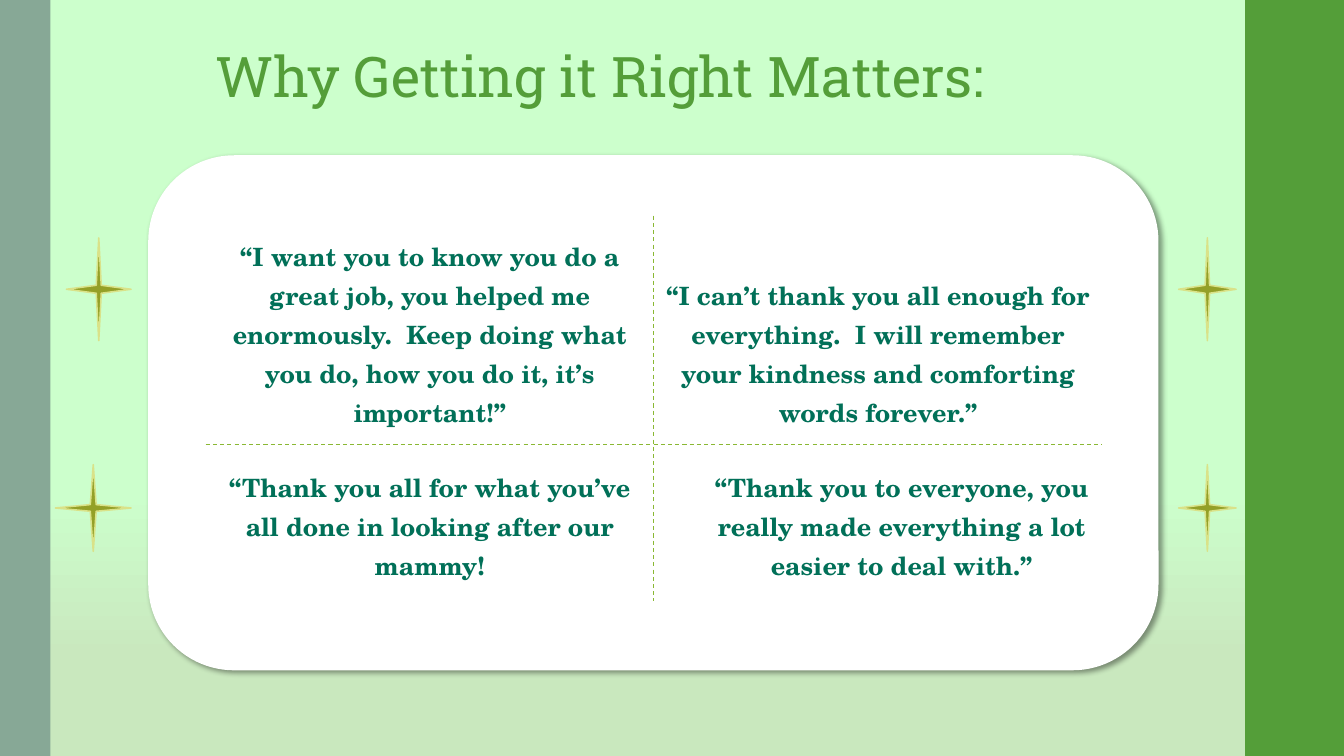
from lxml.etree import SubElement
from pptx import Presentation
from pptx.dml.color import RGBColor
from pptx.enum.dml import MSO_LINE
from pptx.enum.shapes import MSO_CONNECTOR, MSO_SHAPE
from pptx.enum.text import MSO_ANCHOR, PP_ALIGN
from pptx.oxml.ns import qn
from pptx.util import Pt

# Content
TITLE = "Why Getting it Right Matters:"
# Each quote: text, extra left margin, extra top margin
QUOTES = [
    [("“I want you to know you do a great job, you helped me enormously.  "
      "Keep doing what you do, how you do it, it’s important!”", 0, 0),
     ("“I can’t thank you all enough for everything.  I will remember "
      "your kindness and comforting words forever.”", 0, 39)],
    [("“Thank you all for what you’ve all done in looking after our mammy!", 0, 0),
     ("“Thank you to everyone, you really made everything a lot easier "
      "to deal with.”", 47, 0)],
]

# Colours
MINT = RGBColor(0xCC, 0xFF, 0xCC)
SAGE = RGBColor(0xC9, 0xE8, 0xBE)
GREEN = RGBColor(0x54, 0x9E, 0x39)
GREY_GREEN = RGBColor(0x87, 0xA8, 0x96)
WHITE = RGBColor(0xFF, 0xFF, 0xFF)
TEAL = RGBColor(0x01, 0x70, 0x58)
OLIVE = RGBColor(0x94, 0xA0, 0x27)
PALE_OLIVE = RGBColor(0xD9, 0xE2, 0x89)
LIME = RGBColor(0x8A, 0xB8, 0x33)

# Layout, 100 px to the inch
PX = 9144
WIDTH, HEIGHT = 1333, 750
LEFT, TOP, TABLE_WIDTH = 204, 214, 889
ROW_HEIGHTS = [235, 147]
TABLE_HEIGHT = sum(ROW_HEIGHTS)
DIVIDER_X, DIVIDER_Y = LEFT + TABLE_WIDTH // 2, 441
STAR_ROWS = [(236, 102), (461, 86)]
STAR_COLUMNS = [[(66, 64), (1169, 57)], [(55, 75), (1169, 57)]]


def px(*lengths):
    return [length * PX for length in lengths]


def add_block(page, kind, bounds, colour):
    block = page.shapes.add_shape(kind, *px(*bounds))
    block.shadow.inherit = False
    block.fill.solid()
    block.fill.fore_color.rgb = colour
    block.line.fill.background()
    return block


def add_card_shadow(card):
    effects = card._element.spPr.find(qn("a:effectLst"))
    shadow = SubElement(effects, qn("a:outerShdw"), blurRad=str(Pt(4)),
                        dist=str(Pt(3)), dir="2700000", rotWithShape="0")
    colour = SubElement(shadow, qn("a:srgbClr"), val="000000")
    SubElement(colour, qn("a:alpha"), val="40000")


def add_divider(page, *ends):
    divider = page.shapes.add_connector(MSO_CONNECTOR.STRAIGHT, *px(*ends))
    divider.line.color.rgb = LIME
    divider.line.width = Pt(0.75)
    divider.line.dash_style = MSO_LINE.DASH
    SubElement(divider._element.spPr, qn("a:effectLst"))


def style_text(paragraph, font_name, size, colour):
    paragraph.font.name = font_name
    paragraph.font.size = Pt(size)
    paragraph.font.color.rgb = colour


def fill_cell(cell, quote, indent, drop):
    cell.fill.solid()
    cell.fill.fore_color.rgb = WHITE
    cell.vertical_anchor = MSO_ANCHOR.MIDDLE
    cell.margin_left, cell.margin_right = px(7 + indent, 7)
    cell.margin_top, cell.margin_bottom = px(4 + drop, 4)
    para = cell.text_frame.paragraphs[0]
    para.text = quote
    para.alignment = PP_ALIGN.CENTER
    style_text(para, "TeX Gyre Schola", 18, TEAL)
    para.font.bold = True


deck = Presentation()
deck.slide_width, deck.slide_height = px(WIDTH, HEIGHT)
page = deck.slides.add_slide(deck.slide_layouts[6])

# Background and side bands
backdrop = page.background.fill
backdrop.gradient()
backdrop.gradient_angle = 270
for stop, position, colour in zip(backdrop.gradient_stops, (0.65, 0.87), (MINT, SAGE)):
    stop.position = position
    stop.color.rgb = colour
add_block(page, MSO_SHAPE.RECTANGLE, (1235, 0, WIDTH - 1235, HEIGHT), GREEN)
add_block(page, MSO_SHAPE.RECTANGLE, (0, 0, 50, HEIGHT), GREY_GREEN)

# White card
add_card_shadow(add_block(page, MSO_SHAPE.ROUNDED_RECTANGLE, (147, 154, 1002, 511), WHITE))

# Quotes
table = page.shapes.add_table(2, 2, *px(LEFT, TOP, TABLE_WIDTH, TABLE_HEIGHT)).table
table.first_row = table.horz_banding = False
for row, height, quotes in zip(table.rows, ROW_HEIGHTS, QUOTES):
    row.height = height * PX
    for cell, quote in zip(row.cells, quotes):
        fill_cell(cell, *quote)

# Title
box = page.shapes.add_textbox(*px(LEFT, 36, TABLE_WIDTH, 77))
box.text_frame.word_wrap = True
heading = box.text_frame.paragraphs[0]
heading.text = TITLE
style_text(heading, "Roboto Slab", 40, GREEN)

# Stars beside the card
for (top, height), columns in zip(STAR_ROWS, STAR_COLUMNS):
    for left, width in columns:
        star = add_block(page, MSO_SHAPE.STAR_4_POINT, (left, top, width, height), OLIVE)
        star.adjustments[0] = 0.055
        star.line.color.rgb = PALE_OLIVE
        star.line.width = Pt(1.1)

# Dividers between the quotes
add_divider(page, DIVIDER_X, TOP, DIVIDER_X, TOP + TABLE_HEIGHT)
add_divider(page, LEFT, DIVIDER_Y, LEFT + TABLE_WIDTH, DIVIDER_Y)

deck.save("out.pptx")
